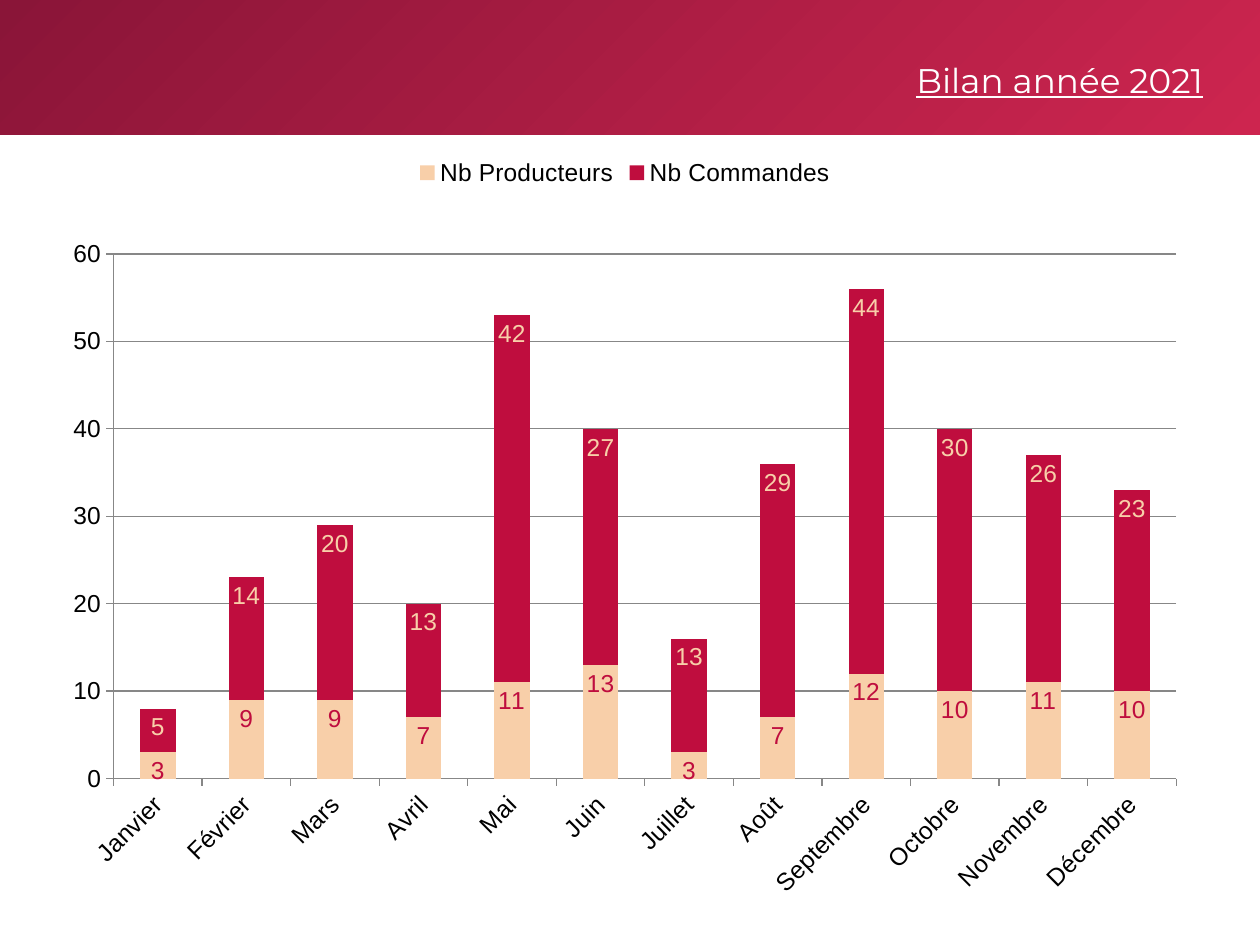
from dataclasses import dataclass

import pptx
import pptx.chart.data
import pptx.dml.color
import pptx.enum.chart
import pptx.enum.shapes
import pptx.enum.text
import pptx.oxml
import pptx.oxml.ns
import pptx.util

RGB = pptx.dml.color.RGBColor.from_string
CHART = pptx.enum.chart


@dataclass(frozen=True)
class Theme:
    dark: str = "8A1538"
    bright: str = "CD254F"
    crimson: str = "BF0D3E"
    peach: str = "F8CFA9"
    white: str = "FFFFFF"
    black: str = "000000"
    grid: str = "878787"
    title_font: str = "Montserrat"
    chart_font: str = "Arial"
    title_size: float = 19.5
    chart_size: float = 14


@dataclass(frozen=True)
class Area:
    """Shares of the slide's width and height."""
    left: float
    top: float
    width: float
    height: float


@dataclass(frozen=True)
class Measure:
    name: str
    counts: tuple[int, ...]
    color: str
    label_color: str


THEME = Theme()
SLIDE_WIDTH, SLIDE_HEIGHT = pptx.util.Inches(10), pptx.util.Inches(7.5)
BANNER = Area(0, 0, 1, 1.07 / 7.5)
TITLE = Area(0.5, 0.42 / 7.5, 0.465, 0.65 / 7.5)
CHART_AREA = Area(0.043, 1.15 / 7.5, 0.906, 6.06 / 7.5)
PLOT = {"x": 0.052, "y": 0.143, "w": 0.931, "h": 0.687}
MONTHS = ("Janvier", "Février", "Mars", "Avril", "Mai", "Juin", "Juillet",
          "Août", "Septembre", "Octobre", "Novembre", "Décembre")
MEASURES = (
    Measure("Nb Producteurs", (3, 9, 9, 7, 11, 13, 3, 7, 12, 10, 11, 10),
            THEME.peach, THEME.crimson),
    Measure("Nb Commandes", (5, 14, 20, 13, 42, 27, 13, 29, 44, 30, 26, 23),
            THEME.crimson, THEME.peach),
)


def place(area: Area) -> tuple[int, int, int, int]:
    return (round(area.left * SLIDE_WIDTH), round(area.top * SLIDE_HEIGHT),
            round(area.width * SLIDE_WIDTH), round(area.height * SLIDE_HEIGHT))


def apply(target, **values) -> None:
    for attribute, value in values.items():
        setattr(target, attribute, value)


def style_font(font, size: float, name: str, color: str, **extra) -> None:
    apply(font, size=pptx.util.Pt(size), name=name, **extra)
    font.color.rgb = RGB(color)


def add_banner(slide) -> None:
    banner = slide.shapes.add_shape(
        pptx.enum.shapes.MSO_SHAPE.RECTANGLE, *place(BANNER))
    banner.shadow.inherit = False
    banner.line.fill.background()
    banner.fill.gradient()
    banner.fill.gradient_angle = 315
    for stop, position, color in zip(banner.fill.gradient_stops, (0, 1),
                                     (THEME.dark, THEME.bright)):
        stop.position = position
        stop.color.rgb = RGB(color)


def add_title(slide, wording: str) -> None:
    frame = slide.shapes.add_textbox(*place(TITLE)).text_frame
    frame.word_wrap = True
    paragraph = frame.paragraphs[0]
    paragraph.alignment = pptx.enum.text.PP_ALIGN.RIGHT
    run = paragraph.add_run()
    run.text = wording
    style_font(run.font, THEME.title_size, THEME.title_font, THEME.white,
               underline=True)


def fix_plot_area(chart) -> None:
    """Pin the inner plot area to its shares of the chart."""
    plot_area = chart.plots[0]._element.getparent()
    for layout in plot_area.findall(pptx.oxml.ns.qn("c:layout")):
        plot_area.remove(layout)
    modes = "".join(f'<c:{side}Mode val="edge"/>' for side in "xy")
    shares = "".join(f'<c:{side} val="{share}"/>'
                     for side, share in PLOT.items())
    plot_area.insert(0, pptx.oxml.parse_xml(
        f'<c:layout {pptx.oxml.ns.nsdecls("c")}><c:manualLayout>'
        f'<c:layoutTarget val="inner"/>{modes}{shares}'
        '</c:manualLayout></c:layout>'))


def style_axes(chart) -> None:
    for axis in (chart.category_axis, chart.value_axis):
        apply(axis, major_tick_mark=CHART.XL_TICK_MARK.OUTSIDE,
              minor_tick_mark=CHART.XL_TICK_MARK.NONE)
        axis.format.line.color.rgb = RGB(THEME.grid)
        style_font(axis.tick_labels.font, THEME.chart_size, THEME.chart_font,
                   THEME.black)
    apply(chart.value_axis, minimum_scale=0, maximum_scale=60, major_unit=10,
          has_major_gridlines=True)
    chart.value_axis.major_gridlines.format.line.color.rgb = RGB(THEME.grid)
    month_body = chart.category_axis._element.find(
        f'{pptx.oxml.ns.qn("c:txPr")}/{pptx.oxml.ns.qn("a:bodyPr")}')
    month_body.set("rot", str(-45 * 60000))


def style_series(series, measure: Measure) -> None:
    series.format.fill.solid()
    series.format.fill.fore_color.rgb = RGB(measure.color)
    labels = series.data_labels
    apply(labels, show_value=True,
          position=CHART.XL_LABEL_POSITION.INSIDE_END)
    style_font(labels.font, THEME.chart_size, THEME.chart_font,
               measure.label_color)


def add_monthly_chart(slide) -> None:
    data = pptx.chart.data.CategoryChartData()
    data.categories = MONTHS
    for measure in MEASURES:
        data.add_series(measure.name, measure.counts)
    chart = slide.shapes.add_chart(
        CHART.XL_CHART_TYPE.COLUMN_STACKED, *place(CHART_AREA), data).chart
    style_font(chart.font, THEME.chart_size, THEME.chart_font, THEME.black)
    apply(chart, has_title=False, has_legend=True)
    apply(chart.legend, position=CHART.XL_LEGEND_POSITION.TOP,
          include_in_layout=False)
    style_font(chart.legend.font, THEME.chart_size, THEME.chart_font,
               THEME.black)
    plot = chart.plots[0]
    apply(plot, gap_width=150, overlap=100, vary_by_categories=False)
    for series, measure in zip(plot.series, MEASURES):
        style_series(series, measure)
    style_axes(chart)
    fix_plot_area(chart)


def main() -> None:
    deck = pptx.Presentation()
    apply(deck, slide_width=SLIDE_WIDTH, slide_height=SLIDE_HEIGHT)
    slide = deck.slides.add_slide(deck.slide_layouts[6])
    add_banner(slide)
    add_title(slide, "Bilan année 2021")
    add_monthly_chart(slide)
    deck.save("out.pptx")


if __name__ == "__main__":
    main()
